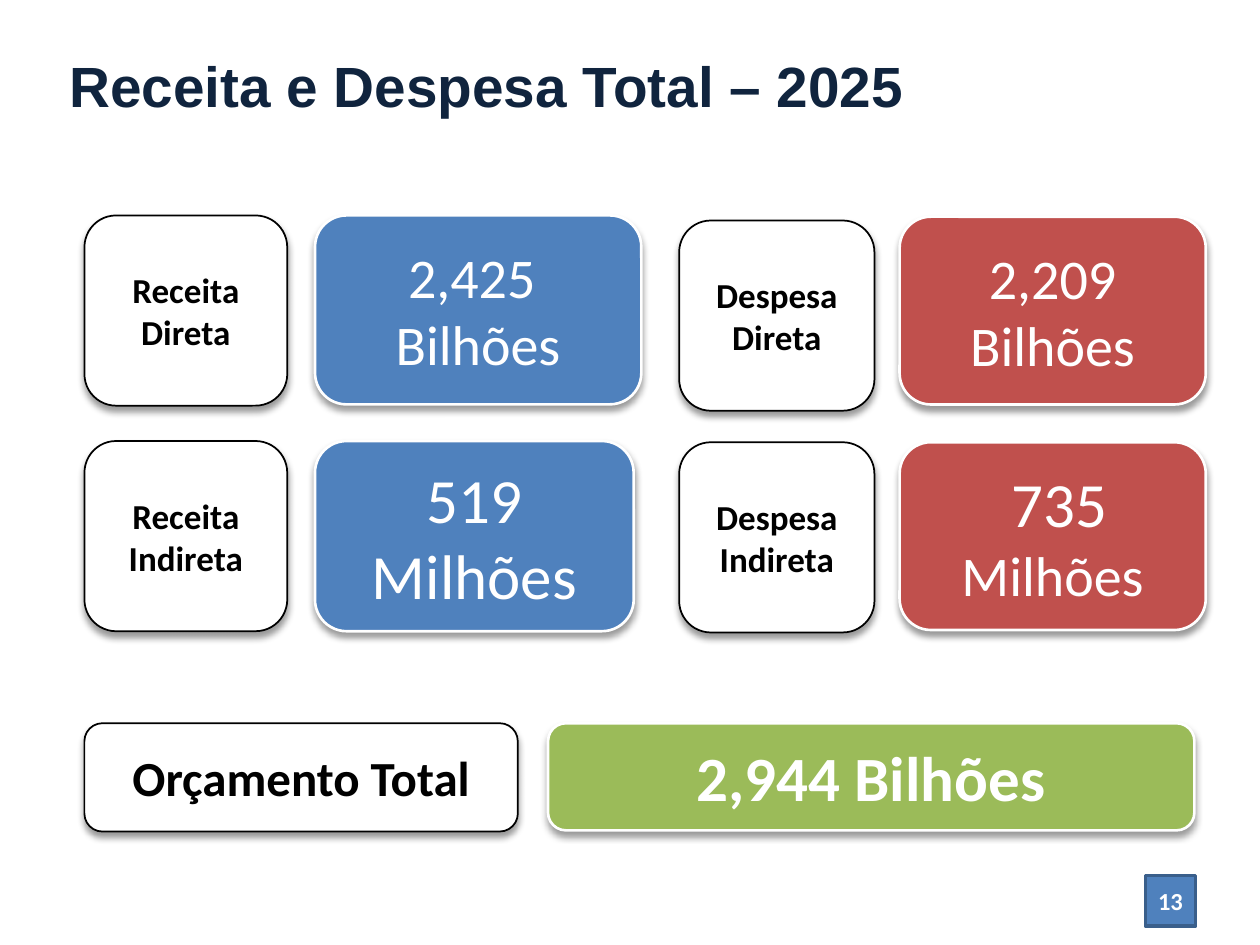
from lxml.etree import SubElement
from pptx import Presentation
from pptx.dml.color import RGBColor
from pptx.enum.shapes import MSO_SHAPE as Shape
from pptx.enum.text import MSO_ANCHOR as Anchor, MSO_AUTO_SIZE as Fit, PP_ALIGN as Align
from pptx.oxml.ns import qn
from pptx.util import Inches, Pt

NAVY = RGBColor(0x10, 0x24, 0x3E)
BLACK = RGBColor(0x00, 0x00, 0x00)
WHITE = RGBColor(0xFF, 0xFF, 0xFF)
BLUE = RGBColor(0x4F, 0x81, 0xBD)
EDGE = RGBColor(0x3A, 0x5F, 0x8B)
RED = RGBColor(0xC0, 0x50, 0x4D)
GREEN = RGBColor(0x9B, 0xBB, 0x59)

# label, place, value lines, place, line sizes, fill
CARDS = [
    ("Receita Direta", (0.67, 1.71, 1.61, 1.51),
     ["2,425 ", "Bilhões"], (2.5, 1.71, 2.59, 1.5), [32, 32], BLUE),
    ("Receita Indireta", (0.67, 3.5, 1.61, 1.51),
     ["519", "Milhões"], (2.5, 3.5, 2.53, 1.51), [36, 36], BLUE),
    ("Despesa Direta", (5.39, 1.75, 1.55, 1.51),
     ["2,209", "Bilhões"], (7.14, 1.72, 2.43, 1.49), [32, 32], RED),
    ("Despesa Indireta", (5.39, 3.51, 1.55, 1.51),
     [" 735", "Milhões"], (7.14, 3.51, 2.43, 1.49), [36, 32], RED),
]


def style(para, size, color, bold, name="Calibri"):
    font = para.font
    font.name, font.size, font.bold = name, Pt(size), bold
    font.color.rgb = color


def add_box(shapes, kind, place, fill, line, width):
    box = shapes.add_shape(kind, *map(Inches, place))
    box.shadow.inherit = False
    box.fill.solid()
    box.fill.fore_color.rgb = fill
    box.line.color.rgb = line
    box.line.width = Pt(width)
    return box


def add_shade(box):
    """Give the box a soft black shadow straight below it."""
    effects = box._element.spPr.find(qn("a:effectLst"))
    outer = SubElement(effects, qn("a:outerShdw"), blurRad=str(Pt(4)),
                       dist=str(Pt(3)), dir="5400000", rotWithShape="0")
    color = SubElement(outer, qn("a:srgbClr"), val=str(BLACK))
    SubElement(color, qn("a:alpha"), val="40000")


def write(box, lines, sizes, color, bold, inset=0):
    frame = box.text_frame
    frame.word_wrap = True
    frame.vertical_anchor = Anchor.MIDDLE
    frame.margin_left = frame.margin_right = Inches(inset)
    frame.margin_top = frame.margin_bottom = Inches(inset / 2)
    frame.text = "\n".join(lines)
    for para, size in zip(frame.paragraphs, sizes):
        para.alignment = Align.CENTER
        style(para, size, color, bold)


def add_label(shapes, text, place, size):
    box = add_box(shapes, Shape.ROUNDED_RECTANGLE, place, WHITE, BLACK, 1)
    add_shade(box)
    write(box, [text], [size], BLACK, True, 0.1)


def add_value(shapes, lines, place, sizes, fill, bold=False):
    box = add_box(shapes, Shape.ROUNDED_RECTANGLE, place, fill, WHITE, 1.5)
    add_shade(box)
    write(box, lines, sizes, WHITE, bold)


def add_title(slide, text):
    title = slide.shapes.title
    title.left, title.top = Inches(0.45), Inches(0.27)
    title.width, title.height = Inches(6.99), Inches(0.8)
    frame = title.text_frame
    frame.text = text
    frame.auto_size = Fit.NONE
    frame.vertical_anchor = Anchor.MIDDLE
    para = frame.paragraphs[0]
    para.alignment = Align.LEFT
    style(para, 32.4, NAVY, True, "Arial")


def add_badge(shapes, text):
    box = add_box(shapes, Shape.RECTANGLE, (9.09, 6.95, 0.4, 0.4), BLUE, EDGE, 2)
    write(box, [text], [14], WHITE, True)


def main():
    deck = Presentation()
    deck.slide_width, deck.slide_height = Inches(10), Inches(7.5)
    slide = deck.slides.add_slide(deck.slide_layouts[5])
    add_title(slide, "Receita e Despesa Total – 2025")

    total = slide.shapes.add_group_shape().shapes
    add_label(total, "Orçamento Total", (0.67, 5.74, 3.44, 0.86), 28)
    add_value(total, ["2,944 Bilhões"], (4.35, 5.74, 5.13, 0.85), [36], GREEN, True)

    cards = slide.shapes.add_group_shape().shapes
    for label, spot, lines, place, sizes, fill in CARDS:
        add_label(cards, label, spot, 20)
        add_value(cards, lines, place, sizes, fill)

    add_badge(slide.shapes, "13")
    deck.save("out.pptx")


if __name__ == "__main__":
    main()
